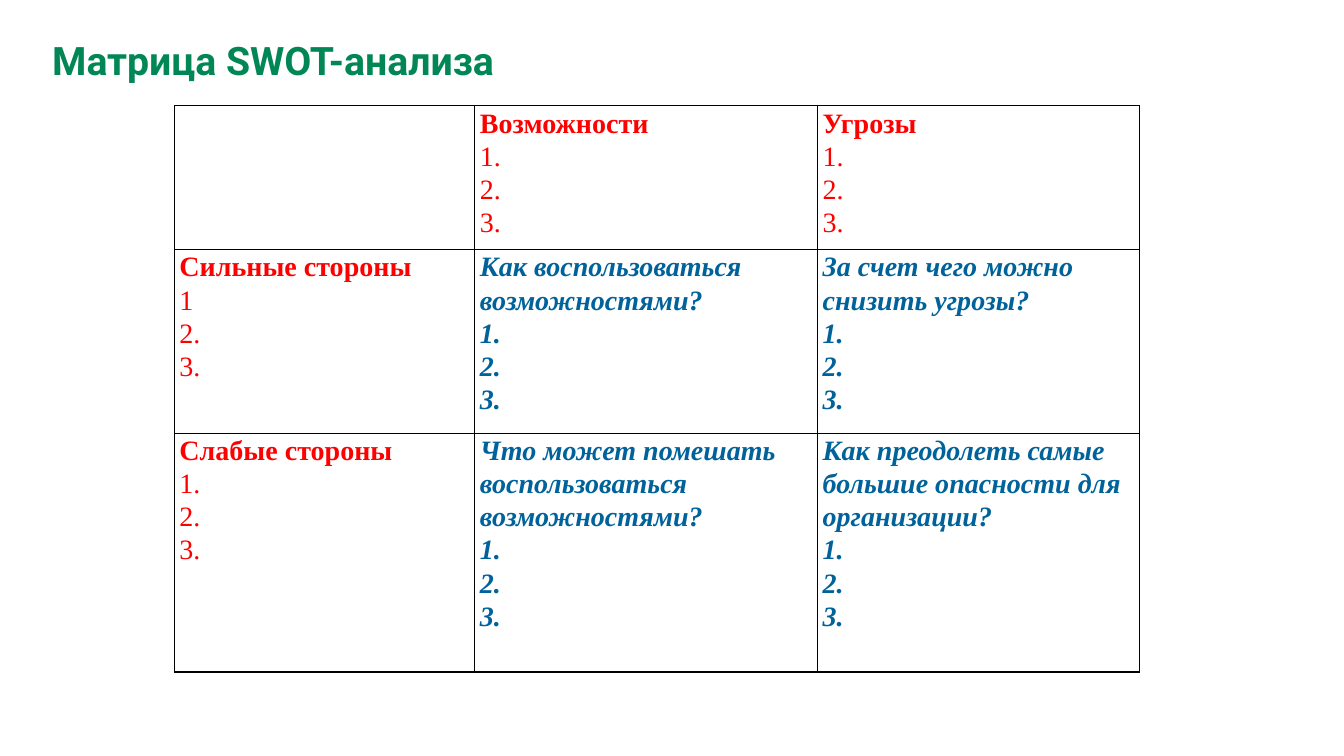
from lxml import etree
from pptx import Presentation
from pptx.dml.color import RGBColor
from pptx.enum.text import MSO_ANCHOR
from pptx.oxml.ns import qn
from pptx.util import Inches, Pt

MIDDLE = MSO_ANCHOR.MIDDLE
SLIDE_WIDTH, SLIDE_HEIGHT = 13.33, 7.5
GREEN, RED, BLUE, BLACK = "008755", "FF0000", "00629B", "000000"

TITLE_FORMAT = {"name": "Roboto", "size": Pt(28), "bold": True}
HEADING_FORMAT = {"name": "Times New Roman", "size": Pt(20), "bold": True}
ITEM_FORMAT = HEADING_FORMAT | {"bold": False}
QUESTION_FORMAT = HEADING_FORMAT | {"italic": True}
CELL_MARGINS = {
    "margin_left": Inches(0.05), "margin_right": Inches(0.05),
    "margin_top": 0, "margin_bottom": 0,
}

COLUMN_WIDTHS = [2.98, 3.4, 3.19]
ROW_HEIGHTS = [1.21, 1.82, 2.37]
NUMBERS = ["1.", "2.", "3."]
MATRIX = [
    [[], ["Возможности", *NUMBERS], ["Угрозы", *NUMBERS]],
    [
        ["Сильные стороны", "1", "2.", "3."],
        ["Как воспользоваться", "возможностями?", *NUMBERS],
        ["За счет чего можно", "снизить угрозы?", *NUMBERS],
    ],
    [
        ["Слабые стороны", *NUMBERS],
        ["Что может помешать воспользоваться возможностями?", *NUMBERS],
        ["Как преодолеть самые большие опасности для организации?", *NUMBERS],
    ],
]


def color(hex_value):
    return RGBColor.from_string(hex_value)


def set_attributes(target, values):
    for name, value in values.items():
        setattr(target, name, value)


def write_line(paragraph, text, font_format, hex_value):
    run = paragraph.add_run()
    run.text = text
    set_attributes(run.font, font_format)
    run.font.color.rgb = color(hex_value)


def add_title(slide, text):
    title = slide.shapes.add_textbox(
        Inches(0.42), Inches(0.22), Inches(12.2), Inches(0.75))
    frame = title.text_frame
    set_attributes(frame, {"word_wrap": True, "vertical_anchor": MIDDLE})
    write_line(frame.paragraphs[0], text, TITLE_FORMAT, GREEN)


def add_borders(cell):
    properties = cell._tc.get_or_add_tcPr()
    for position, side in enumerate(("lnL", "lnR", "lnT", "lnB")):
        border = etree.Element(qn(f"a:{side}"), w=str(Pt(1)))
        fill = etree.SubElement(border, qn("a:solidFill"))
        etree.SubElement(fill, qn("a:srgbClr"), val=BLACK)
        properties.insert(position, border)


def fill_cell(cell, lines, is_question):
    cell.fill.background()
    set_attributes(cell, CELL_MARGINS)
    add_borders(cell)
    frame = cell.text_frame
    for index, text in enumerate(lines):
        paragraph = frame.add_paragraph() if index else frame.paragraphs[0]
        paragraph.line_spacing = 1.07
        if is_question:
            write_line(paragraph, text, QUESTION_FORMAT, BLUE)
        else:
            write_line(paragraph, text, ITEM_FORMAT if index else HEADING_FORMAT, RED)


def add_matrix(slide):
    matrix = slide.shapes.add_table(
        len(ROW_HEIGHTS), len(COLUMN_WIDTHS), Inches(1.73), Inches(1.05),
        Inches(sum(COLUMN_WIDTHS)), Inches(sum(ROW_HEIGHTS))).table
    set_attributes(matrix, {"first_row": False, "horz_banding": False})
    for column, width in zip(matrix.columns, COLUMN_WIDTHS):
        column.width = Inches(width)
    for row, height in zip(matrix.rows, ROW_HEIGHTS):
        row.height = Inches(height)
    for row_index, row in enumerate(MATRIX):
        for column_index, lines in enumerate(row):
            is_question = row_index > 0 and column_index > 0
            fill_cell(matrix.cell(row_index, column_index), lines, is_question)


def main():
    presentation = Presentation()
    presentation.slide_width = Inches(SLIDE_WIDTH)
    presentation.slide_height = Inches(SLIDE_HEIGHT)
    slide = presentation.slides.add_slide(presentation.slide_layouts[6])
    add_title(slide, "Матрица SWOT-анализа")
    add_matrix(slide)
    presentation.save("out.pptx")


if __name__ == "__main__":
    main()
